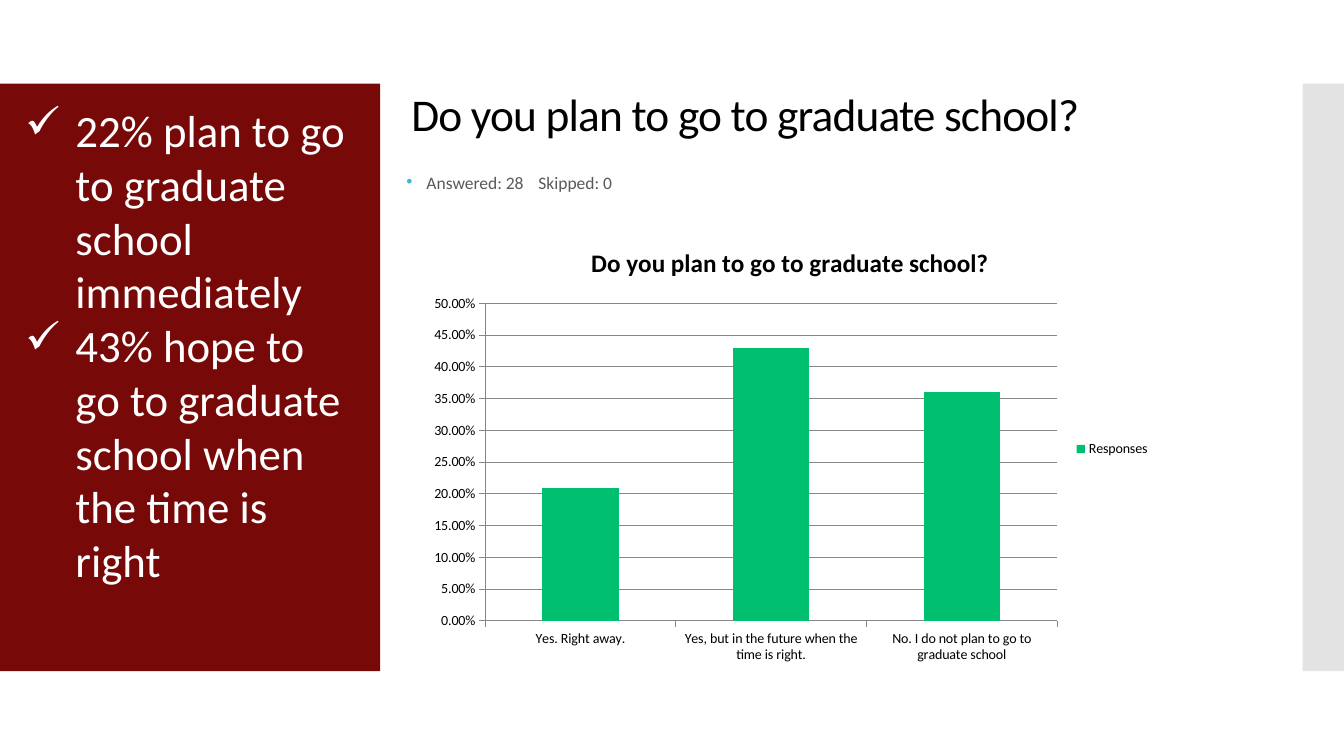
from lxml import etree
from pptx import Presentation
from pptx.chart import data
from pptx.dml.color import RGBColor
from pptx.enum import chart as kinds, shapes, text
from pptx.oxml import ns
from pptx.util import Inches, Pt

RED = RGBColor(0x77, 0x0A, 0x08)
GRAY = RGBColor(0xC8, 0xC8, 0xC8)
WHITE = RGBColor(0xFF, 0xFF, 0xFF)
BLACK = RGBColor(0, 0, 0)
DIM = RGBColor(0x59, 0x59, 0x59)
LINE = RGBColor(0x87, 0x87, 0x87)
BLUE = RGBColor(0x40, 0xBA, 0xD2)
GREEN = RGBColor(0x00, 0xBF, 0x6F)
ASK = "Do you plan to go to graduate school?"


def style(font, size, color):
    font.name = "Calibri"
    font.size = Pt(size)
    font.color.rgb = color


def bullet(para, mark, indent, color):
    props = para._p.get_or_add_pPr()
    props.set("marL", str(Inches(indent)))
    props.set("indent", str(Inches(-indent)))
    tint = etree.SubElement(props, ns.qn("a:buClr"))
    etree.SubElement(tint, ns.qn("a:srgbClr"), val=str(color))
    etree.SubElement(props, ns.qn("a:buChar"), char=mark)


deck = Presentation()
deck.slide_width = Inches(13.33)
deck.slide_height = Inches(7.5)
slide = deck.slides.add_slide(deck.slide_layouts[1])

for left, width, color in [(0, 3.77, RED), (12.92, 0.41, GRAY)]:
    panel = slide.shapes.add_shape(
        shapes.MSO_SHAPE.RECTANGLE, Inches(left), Inches(0.83), Inches(width), Inches(5.83))
    panel.shadow.inherit = False
    panel.fill.solid()
    panel.fill.fore_color.rgb = color
    panel.line.fill.background()
tone = panel._element.spPr.find(".//" + ns.qn("a:srgbClr"))
etree.SubElement(tone, ns.qn("a:alpha"), val="50000")

notes = slide.shapes.add_textbox(Inches(0.15), Inches(0.97), Inches(3.51), Inches(4.95))
notes.text_frame.word_wrap = True
points = ["22% plan to go to graduate school immediately",
          "43% hope to go to graduate school when the time is right"]
for index, point in enumerate(points):
    para = notes.text_frame.paragraphs[0] if index == 0 else notes.text_frame.add_paragraph()
    bullet(para, "✓", 0.5, WHITE)
    run = para.add_run()
    run.text = point
    style(run.font, 32, WHITE)

title = slide.shapes.title
body = slide.placeholders[1]
for holder, left, top, width, height, words, size, color, space in [
        (title, 3.98, 0.84, 8, 0.64, ASK, 32.4, BLACK, 0.9),
        (body, 3.93, 1.7, 5.83, 0.27, "Answered: 28\tSkipped: 0", 12.5, DIM, 0.7)]:
    holder.left, holder.top = Inches(left), Inches(top)
    holder.width, holder.height = Inches(width), Inches(height)
    frame = holder.text_frame
    frame.auto_size = text.MSO_AUTO_SIZE.NONE
    frame.vertical_anchor = text.MSO_ANCHOR.MIDDLE
    para = frame.paragraphs[0]
    para.alignment = text.PP_ALIGN.LEFT
    para.line_spacing = space
    run = para.add_run()
    run.text = words
    style(run.font, size, color)
title.text_frame.paragraphs[0].runs[0].font._element.set("spc", "-60")
para.space_before = Pt(12)
bullet(para, "•", 0.2, BLUE)
tabs = etree.SubElement(para._p.pPr, ns.qn("a:tabLst"))
etree.SubElement(tabs, ns.qn("a:tab"), pos=str(Inches(1.31)), algn="l")

stats = data.CategoryChartData(number_format="0.00%")
stats.categories = ["Yes. Right away.",
                    "Yes, but in the future when the time is right.",
                    "No. I do not plan to go to graduate school"]
stats.add_series("Responses", [0.21, 0.43, 0.36])
chart = slide.shapes.add_chart(
    kinds.XL_CHART_TYPE.COLUMN_CLUSTERED,
    Inches(4.16), Inches(2.25), Inches(7.35), Inches(4.41), stats).chart
style(chart.font, 10, BLACK)
chart.has_title = True
run = chart.chart_title.text_frame.paragraphs[0].add_run()
run.text = ASK
style(run.font, 18, BLACK)
run.font.bold = True
chart.has_legend = True
chart.legend.position = kinds.XL_LEGEND_POSITION.RIGHT
chart.legend.include_in_layout = False

scale = chart.value_axis
scale.minimum_scale, scale.maximum_scale, scale.major_unit = 0, 0.5, 0.05
scale.tick_labels.number_format = "0.00%"
scale.tick_labels.number_format_is_linked = False
scale.major_gridlines.format.line.color.rgb = LINE
for axis in (scale, chart.category_axis):
    axis.major_tick_mark = kinds.XL_TICK_MARK.OUTSIDE
    axis.format.line.color.rgb = LINE

plot = chart.plots[0]
plot.gap_width = 150
plot.vary_by_categories = False
bars = plot.series[0].format.fill
bars.solid()
bars.fore_color.rgb = GREEN

deck.save("out.pptx")
